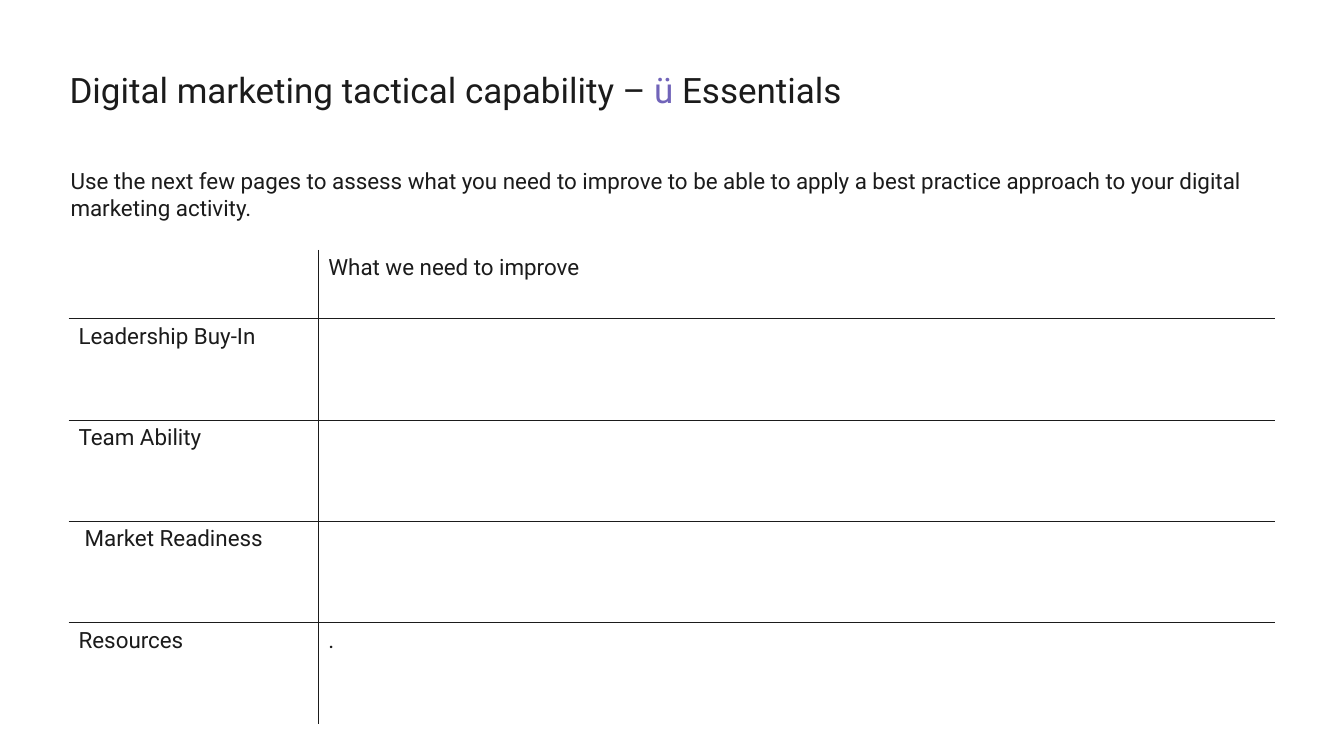
from dataclasses import dataclass

from lxml import etree
from pptx import Presentation
from pptx.dml.color import RGBColor
from pptx.enum.text import MSO_ANCHOR, MSO_AUTO_SIZE, PP_ALIGN
from pptx.oxml.ns import qn
from pptx.util import Inches, Pt

TOP = MSO_ANCHOR.TOP
NO_AUTOFIT = MSO_AUTO_SIZE.NONE
LEFT = PP_ALIGN.LEFT
TITLE_ONLY = 5
PLAIN_TABLE_STYLE = "{2D5ABB26-0587-4C30-8999-92F81FD0307C}"


@dataclass(frozen=True)
class Theme:
    font: str = "Roboto"
    ink: str = "1B1B1B"
    accent: str = "7164B9"
    title_size: float = 25
    body_size: float = 16
    rule_width: float = 0.5


@dataclass(frozen=True)
class Box:
    left: float
    top: float
    width: float
    height: float

    def lengths(self):
        return [Inches(n) for n in (self.left, self.top, self.width, self.height)]


THEME = Theme()
SLIDE_WIDTH, SLIDE_HEIGHT = 13.33, 7.5
MARGIN = 0.68
CONTENT_WIDTH = SLIDE_WIDTH - 2 * MARGIN
TITLE_BOX = Box(MARGIN + 0.01, 0.68, 11.07, 0.42)
INTRO_BOX = Box(MARGIN, 1.65, CONTENT_WIDTH, 0.55)
TABLE_BOX = Box(MARGIN, 2.48, CONTENT_WIDTH, 4.7)
LABEL_SHARE = 0.207
HEADER_SHARE = 0.145
CELL_INDENT = 0.1

TITLE_RUNS = (
    ("Digital marketing tactical capability – ", THEME.ink),
    ("ü ", THEME.accent),
    ("Essentials", THEME.ink),
)
INTRO = (
    "Use the next few pages to assess what you need to improve to be able to "
    "apply a best practice approach to your digital marketing activity."
)
ASSESSMENT_ROWS = (
    ("", "What we need to improve", CELL_INDENT),
    ("Leadership Buy-In", "", CELL_INDENT),
    ("Team Ability", "", CELL_INDENT),
    ("Market Readiness", "", CELL_INDENT + 0.06),
    ("Resources", ".", CELL_INDENT),
)


def style_paragraph(paragraph, size, space_before=0):
    paragraph.alignment = LEFT
    paragraph.space_before = Pt(space_before)
    paragraph.font.name = THEME.font
    paragraph.font.size = Pt(size)
    paragraph.font.color.rgb = RGBColor.from_string(THEME.ink)


def prepare_frame(frame, left=0, top=0):
    frame.word_wrap = True
    frame.auto_size = NO_AUTOFIT
    frame.vertical_anchor = TOP
    frame.margin_left, frame.margin_top = Inches(left), Inches(top)
    frame.margin_right = frame.margin_bottom = 0


def set_borders(cell, visible_edges):
    properties = cell._tc.get_or_add_tcPr()
    for edge in "LRTB":
        line = etree.SubElement(properties, qn(f"a:ln{edge}"), w=str(Pt(THEME.rule_width)))
        if edge in visible_edges:
            fill = etree.SubElement(line, qn("a:solidFill"))
            etree.SubElement(fill, qn("a:srgbClr"), val=THEME.ink)
        else:
            etree.SubElement(line, qn("a:noFill"))


def add_title(slide, box):
    title = slide.shapes.title
    title.left, title.top, title.width, title.height = box.lengths()
    prepare_frame(title.text_frame)
    paragraph = title.text_frame.paragraphs[0]
    style_paragraph(paragraph, THEME.title_size)
    for text, color in TITLE_RUNS:
        run = paragraph.add_run()
        run.text = text
        run.font.color.rgb = RGBColor.from_string(color)


def add_intro(slide, box):
    frame = slide.shapes.add_textbox(*box.lengths()).text_frame
    prepare_frame(frame, left=0.02, top=0.01)
    frame.text = INTRO
    style_paragraph(frame.paragraphs[0], THEME.body_size, space_before=1.3)


def fill_cell(cell, text, indent, edges):
    cell.margin_left, cell.margin_top = Inches(indent), Inches(0.05)
    cell.margin_right = cell.margin_bottom = 0
    cell.vertical_anchor = TOP
    cell.text = text
    style_paragraph(cell.text_frame.paragraphs[0], THEME.body_size, space_before=2.5)
    set_borders(cell, edges)
    cell.fill.background()


def add_assessment_table(slide, box):
    row_count = len(ASSESSMENT_ROWS)
    frame = slide.shapes.add_table(row_count, 2, *box.lengths())
    table = frame.table
    table._tbl.tblPr.find(qn("a:tableStyleId")).text = PLAIN_TABLE_STYLE
    table.first_row = table.horz_banding = False
    for column, share in zip(table.columns, (LABEL_SHARE, 1 - LABEL_SHARE)):
        column.width = Inches(box.width * share)
    body_share = (1 - HEADER_SHARE) / (row_count - 1)
    for index, (label, improvement, indent) in enumerate(ASSESSMENT_ROWS):
        share = body_share if index else HEADER_SHARE
        table.rows[index].height = Inches(box.height * share)
        edges = ("T" if index else "") + ("B" if index < row_count - 1 else "")
        fill_cell(table.cell(index, 0), label, indent, edges + "R")
        fill_cell(table.cell(index, 1), improvement, CELL_INDENT, edges + "L")


def main():
    presentation = Presentation()
    presentation.slide_width = Inches(SLIDE_WIDTH)
    presentation.slide_height = Inches(SLIDE_HEIGHT)
    slide = presentation.slides.add_slide(presentation.slide_layouts[TITLE_ONLY])
    add_title(slide, TITLE_BOX)
    add_intro(slide, INTRO_BOX)
    add_assessment_table(slide, TABLE_BOX)
    presentation.save("out.pptx")


if __name__ == "__main__":
    main()
